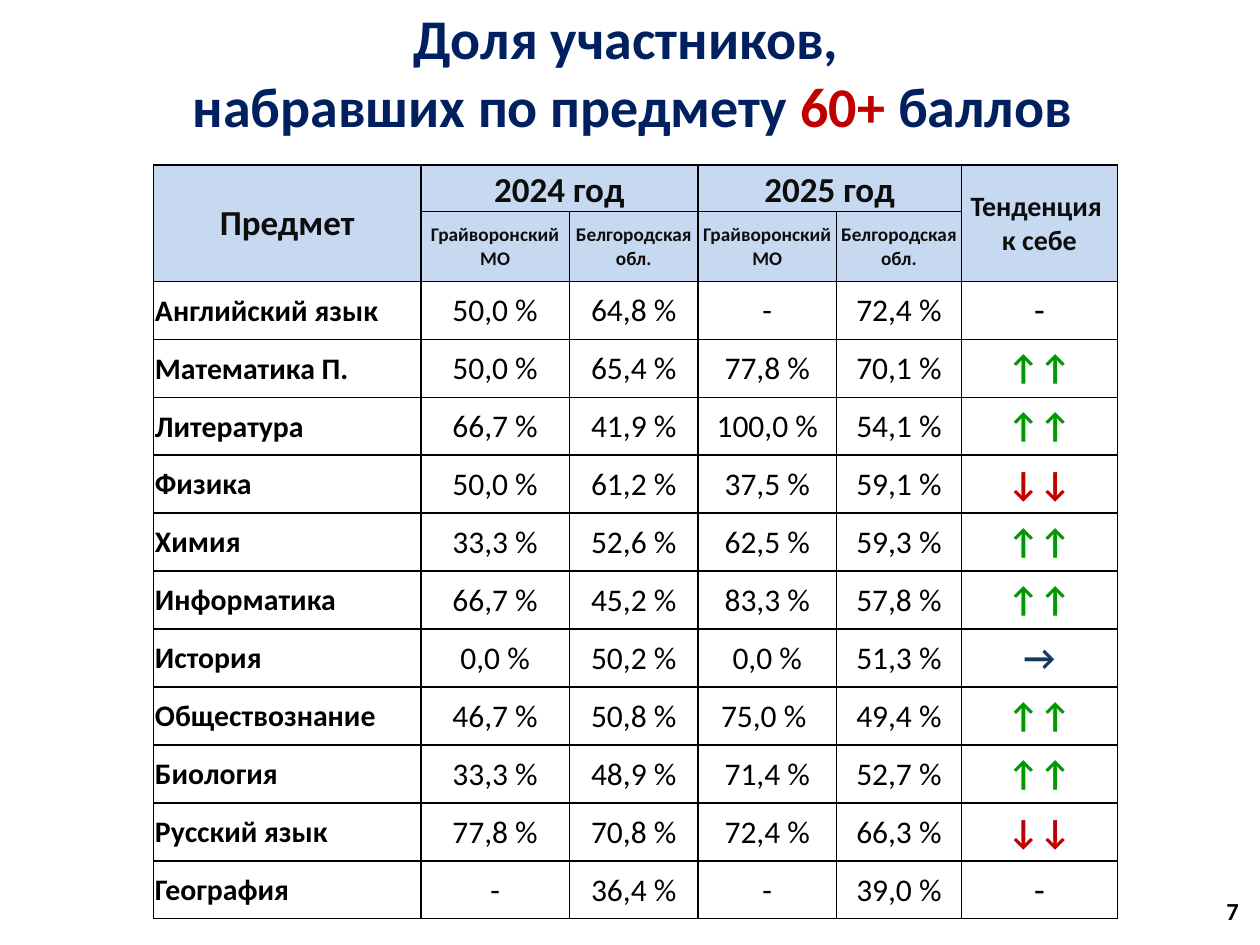
import dataclasses
import typing

import lxml.etree
import pptx
import pptx.dml.color
import pptx.enum.text
import pptx.oxml.ns
import pptx.util

Inches, Pt = pptx.util.Inches, pptx.util.Pt
RGBColor = pptx.dml.color.RGBColor
PP_ALIGN = pptx.enum.text.PP_ALIGN
MSO_ANCHOR = pptx.enum.text.MSO_ANCHOR

FONT = "Calibri"
BLACK = RGBColor(0x00, 0x00, 0x00)
HEADER_TEXT = RGBColor(0x0D, 0x0D, 0x0D)
HEADER_FILL = RGBColor(0xC6, 0xD9, 0xF1)
NAVY = RGBColor(0x00, 0x20, 0x60)
RED = RGBColor(0xC0, 0x00, 0x00)
GREEN = RGBColor(0x00, 0x99, 0x00)
STEEL = RGBColor(0x17, 0x37, 0x5E)

TREND_COLORS = {"↑↑": GREEN, "↓↓": RED, "→": STEEL, "-": BLACK}
COL_WIDTHS = [2.12, 1.18, 1.02, 1.1, 0.99, 1.24]
HEADER_HEIGHT, ROW_HEIGHT = 0.37, 0.46


@dataclasses.dataclass
class Style:
    size: float
    color: RGBColor = BLACK
    bold: bool = True
    align: PP_ALIGN = PP_ALIGN.CENTER
    anchor: MSO_ANCHOR = MSO_ANCHOR.MIDDLE
    fill: typing.Optional[RGBColor] = None


class Header(typing.NamedTuple):
    row: int
    col: int
    rows: int
    cols: int
    text: str
    style: Style


class Subject(typing.NamedTuple):
    name: str
    shares: typing.List[str]
    trend: str


HEAD = Style(20, HEADER_TEXT, fill=HEADER_FILL)
YEAR = dataclasses.replace(HEAD, anchor=MSO_ANCHOR.BOTTOM)
TREND_HEAD = dataclasses.replace(HEAD, size=16)
REGION = dataclasses.replace(HEAD, size=11)
NAME = Style(17, align=PP_ALIGN.LEFT)
SHARE = Style(18, bold=False)

HEADERS = [
    Header(0, 0, 2, 1, "Предмет", HEAD),
    Header(0, 1, 1, 2, "2024 год", YEAR),
    Header(0, 3, 1, 2, "2025 год", YEAR),
    Header(0, 5, 2, 1, "Тенденция \nк себе", TREND_HEAD),
] + [
    Header(1, col, 1, 1, text, REGION)
    for col, text in enumerate(["Грайворонский МО", "Белгородская обл."] * 2, 1)
]

SUBJECTS = [
    Subject("Английский язык", ["50,0 %", "64,8 %", "-", "72,4 %"], "-"),
    Subject("Математика П.", ["50,0 %", "65,4 %", "77,8 %", "70,1 %"], "↑↑"),
    Subject("Литература", ["66,7 %", "41,9 %", "100,0 %", "54,1 %"], "↑↑"),
    Subject("Физика", ["50,0 %", "61,2 %", "37,5 %", "59,1 %"], "↓↓"),
    Subject("Химия", ["33,3 %", "52,6 %", "62,5 %", "59,3 %"], "↑↑"),
    Subject("Информатика", ["66,7 %", "45,2 %", "83,3 %", "57,8 %"], "↑↑"),
    Subject("История", ["0,0 %", "50,2 %", "0,0 %", "51,3 %"], "→"),
    Subject("Обществознание", ["46,7 %", "50,8 %", "75,0 % ", "49,4 %"], "↑↑"),
    Subject("Биология", ["33,3 %", "48,9 %", "71,4 %", "52,7 %"], "↑↑"),
    Subject("Русский язык", ["77,8 %", "70,8 %", "72,4 %", "66,3 %"], "↓↓"),
    Subject("География", ["-", "36,4 %", "-", "39,0 %"], "-"),
]


def add_text(p, text: str, style: Style) -> None:
    """Add styled runs to a paragraph, with a line break at each newline."""
    p.alignment = style.align
    for i, line in enumerate(text.split("\n")):
        if i:
            p.add_line_break()
        r = p.add_run()
        r.text = line
        r.font.name = FONT
        r.font.size = Pt(style.size)
        r.font.bold = style.bold
        r.font.color.rgb = style.color


def add_borders(cell) -> None:
    qn = pptx.oxml.ns.qn
    tc_pr = cell._tc.get_or_add_tcPr()
    for i, side in enumerate(("lnL", "lnR", "lnT", "lnB")):
        ln = lxml.etree.Element(qn(f"a:{side}"), w=str(Pt(1)))
        fill = lxml.etree.SubElement(ln, qn("a:solidFill"))
        lxml.etree.SubElement(fill, qn("a:srgbClr"), val=str(BLACK))
        tc_pr.insert(i, ln)


def fill_cell(cell, text: str, style: Style) -> None:
    cell.vertical_anchor = style.anchor
    if style.fill is not None:
        cell.fill.solid()
        cell.fill.fore_color.rgb = style.fill
    add_text(cell.text_frame.paragraphs[0], text, style)


def add_score_table(slide) -> None:
    n_rows = 2 + len(SUBJECTS)
    heights = [HEADER_HEIGHT] * 2 + [ROW_HEIGHT] * len(SUBJECTS)
    table = slide.shapes.add_table(
        n_rows, len(COL_WIDTHS), Inches(1.22), Inches(1.31),
        Inches(sum(COL_WIDTHS)), Inches(sum(heights))).table
    for col, width in zip(table.columns, COL_WIDTHS):
        col.width = Inches(width)
    for row, height in zip(table.rows, heights):
        row.height = Inches(height)
    for cell in table.iter_cells():
        cell.margin_left = cell.margin_right = cell.margin_top = Inches(0.01)
        cell.margin_bottom = 0
        add_borders(cell)
        cell.fill.background()

    for h in HEADERS:
        cell = table.cell(h.row, h.col)
        if h.rows * h.cols > 1:
            cell.merge(table.cell(h.row + h.rows - 1, h.col + h.cols - 1))
        fill_cell(cell, h.text, h.style)

    for row, subject in enumerate(SUBJECTS, 2):
        fill_cell(table.cell(row, 0), subject.name, NAME)
        for col, share in enumerate(subject.shares, 1):
            fill_cell(table.cell(row, col), share, SHARE)
        trend = Style(20, TREND_COLORS[subject.trend], bold=subject.trend != "-")
        fill_cell(table.cell(row, 5), subject.trend, trend)


def place_title(slide) -> None:
    title = slide.shapes.title
    title.left, title.top = Inches(0.52), Inches(-0.06)
    title.width, title.height = Inches(9), Inches(1.25)
    tf = title.text_frame
    tf.vertical_anchor = MSO_ANCHOR.MIDDLE
    p = tf.paragraphs[0]
    add_text(p, "Доля участников, \nнабравших по предмету ", Style(32, NAVY))
    add_text(p, "60+ ", Style(32, RED))
    add_text(p, "баллов", Style(32, NAVY))


def add_page_number(slide) -> None:
    s = slide.shapes.add_textbox(Inches(7.6), Inches(7.03), Inches(2.33), Inches(0.4))
    tf = s.text_frame
    tf.word_wrap = True
    tf.vertical_anchor = MSO_ANCHOR.MIDDLE
    add_text(tf.paragraphs[0], "7", Style(14, align=PP_ALIGN.RIGHT))


def main() -> None:
    prs = pptx.Presentation()
    prs.slide_width, prs.slide_height = Inches(10), Inches(7.5)
    slide = prs.slides.add_slide(prs.slide_layouts[5])
    add_score_table(slide)
    place_title(slide)
    add_page_number(slide)
    prs.save("out.pptx")


if __name__ == "__main__":
    main()
